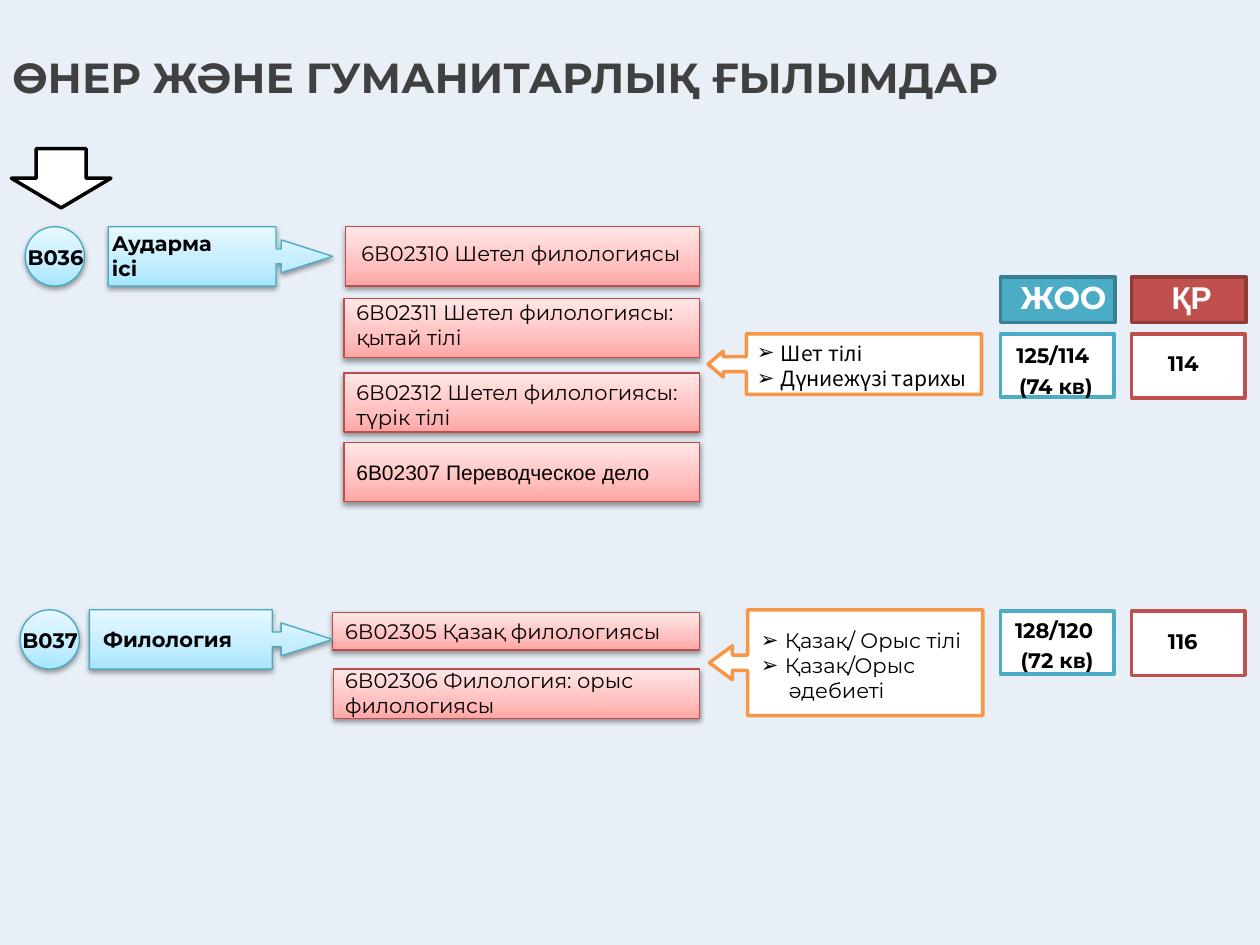
from lxml.etree import SubElement
from pptx import Presentation
from pptx.dml.color import RGBColor
from pptx.enum.shapes import MSO_SHAPE
from pptx.enum.text import MSO_ANCHOR, PP_ALIGN
from pptx.oxml import parse_xml
from pptx.oxml.ns import nsdecls, qn
from pptx.util import Inches, Pt

WHITE = RGBColor(0xFF, 0xFF, 0xFF)
BLACK = RGBColor(0, 0, 0)
GREY = RGBColor(0x40, 0x40, 0x40)
PALE = RGBColor(0xDC, 0xE6, 0xF2)
ORANGE = RGBColor(0xF7, 0x96, 0x46)
TEAL = RGBColor(0x4B, 0xAC, 0xC6)
DARK_TEAL = RGBColor(0x37, 0x7F, 0x92)
SKY_EDGE = RGBColor(0x46, 0xAA, 0xC5)
RED = RGBColor(0xC0, 0x50, 0x4D)
DARK_RED = RGBColor(0x8E, 0x3B, 0x39)
ROSE_EDGE = RGBColor(0xBF, 0x4C, 0x48)
SKY = [(0, RGBColor(0xA7, 0xE6, 0xFF)), (35, RGBColor(0xC1, 0xED, 0xFF)),
       (100, RGBColor(0xE7, 0xF8, 0xFF))]
ROSE = [(0, RGBColor(0xFF, 0xA6, 0xA5)), (35, RGBColor(0xFF, 0xC0, 0xBF)),
        (100, RGBColor(0xFF, 0xE7, 0xE7))]

WIDTH, HEIGHT = 10, 7.5
BADGE = 0.47           # height of badges, callouts and most programme bars
BAR_RIGHT = 5.55       # shared right edge of the programme bars
SCORE_WIDTH = 0.9
UNI_LEFT, STATE_LEFT = 7.94, 8.98

TITLE = "ӨНЕР ЖӘНЕ ГУМАНИТАРЛЫҚ ҒЫЛЫМДАР"

GROUPS = [
    {"code": "B036", "badge": (0.2, 1.8), "code_at": (0.12, 1.89),
     "arrow": (0.86, 1.8, 1.78, BADGE), "arrow_adj": (0.25, 0.278, 0.868, 0.748),
     "name": ["Аударма", "ісі"], "name_at": (0.79, 1.78, 1.61, 0.5),
     "subjects": ["Шет тілі", "Дүниежүзі тарихы"], "tail": None,
     "subject_font": "Noto Sans CJK KR", "subject_at": (5.91, 2.65, 2.17, 0.5),
     "callout": (5.62, 2.65, 2.17, 0.48), "callout_adj": (0.25, 0.213, 0.25, 0.86),
     "score_top": 2.65, "uni": ["125/114 ", "(74 кв)"], "uni_at": (7.93, 2.64),
     "state": "114", "state_top": 2.73},
    {"code": "B037", "badge": (0.16, 4.84), "code_at": (0.08, 4.93),
     "arrow": (0.71, 4.84, 1.93, BADGE), "arrow_adj": (0.25, 0.278, 0.868, 0.752),
     "name": ["Филология"], "name_at": (0.72, 4.92, 3.3, 0.3),
     "subjects": ["Қазақ/ Орыс тілі", "Қазақ/Орыс"], "tail": "әдебиеті",
     "subject_font": "Montserrat", "subject_at": (5.94, 4.93, 2.05, 0.71),
     "callout": (5.63, 4.84, 2.17, 0.84), "callout_adj": (0.144, 0.16, 0.218, 0.86),
     "score_top": 4.85, "uni": ["128/120 ", "(72 кв)"], "uni_at": (7.94, 4.82),
     "state": "116", "state_top": 4.94},
]

# bar left, top, height; text left, top, width; lines; font
PROGRAMMES = [
    (2.74, 1.8, BADGE, (2.77, 1.86, 3.78), ["6В02310 Шетел филологиясы"], "Montserrat"),
    (2.73, 2.37, BADGE, (2.73, 2.33, 3.15),
     ["6В02311 Шетел филологиясы:", "қытай тілі"], "Montserrat"),
    (2.73, 2.96, BADGE, (2.73, 2.96, 3.15),
     ["6В02312 Шетел филологиясы:", "түрік тілі"], "Montserrat"),
    (2.73, 3.51, BADGE, (2.73, 3.6, 2.99), ["6В02307 Переводческое дело"], "Arial"),
    (2.64, 4.86, 0.3, None, ["6В02305 Қазақ филологиясы"], "Montserrat"),
    (2.65, 5.31, 0.39, (2.64, 5.25, 3.15),
     ["6В02306 Филология: орыс", "филологиясы"], "Montserrat"),
]

# left, fill, edge, text, text left, text width, font, alignment
HEADERS = [
    (UNI_LEFT, TEAL, DARK_TEAL, "ЖОО", 7.99, 0.9, "Montserrat", PP_ALIGN.CENTER),
    (STATE_LEFT, RED, DARK_RED, "ҚР", 9.2, 0.77, "Arial", PP_ALIGN.LEFT),
]

deck = Presentation()
deck.slide_width, deck.slide_height = Inches(WIDTH), Inches(HEIGHT)
page = deck.slides.add_slide(deck.slide_layouts[6])


def add_shape(kind, at, fill, edge=None, weight=2.0, adjust=()):
    """Add a flat shape, or a glossy one with a shadow when fill is a list of stops."""
    shape = page.shapes.add_shape(kind, *map(Inches, at))
    shape.shadow.inherit = False
    for index, value in enumerate(adjust):
        shape.adjustments[index] = value
    if isinstance(fill, list):
        add_gloss(shape, fill)
    else:
        shape.fill.solid()
        shape.fill.fore_color.rgb = fill
    if edge is None:
        shape.line.fill.background()
    else:
        shape.line.color.rgb = edge
        shape.line.width = Pt(weight)
    return shape


def add_gloss(shape, stops):
    """Give the shape an upward gradient and a soft shadow below."""
    marks = "".join(f'<a:gs pos="{pos * 1000}"><a:srgbClr val="{color}"/></a:gs>'
                    for pos, color in stops)
    gradient = parse_xml(f'<a:gradFill {nsdecls("a")} rotWithShape="1"><a:gsLst>{marks}'
                         '</a:gsLst><a:lin ang="16200000" scaled="0"/></a:gradFill>')
    properties = shape.element.spPr
    properties.find(qn("a:prstGeom")).addnext(gradient)
    shadow = SubElement(properties.find(qn("a:effectLst")), qn("a:outerShdw"),
                        blurRad=str(Pt(3.1)), dist=str(Pt(1.6)), dir="5400000",
                        rotWithShape="0")
    color = SubElement(shadow, qn("a:srgbClr"), val=str(BLACK))
    SubElement(color, qn("a:alpha"), val="38000")


def write(box, lines, font="Montserrat", size=12, color=BLACK, bold=False,
          align=PP_ALIGN.LEFT, anchor=MSO_ANCHOR.TOP):
    frame = box.text_frame
    frame.word_wrap = True
    frame.vertical_anchor = anchor
    for index, line in enumerate(lines):
        para = frame.paragraphs[0] if index == 0 else frame.add_paragraph()
        para.alignment = align
        span = para.add_run()
        span.text = line
        span.font.name, span.font.size = font, Pt(size)
        span.font.bold, span.font.color.rgb = bold, color
    return frame.paragraphs


def add_label(at, lines, **style):
    return write(page.shapes.add_textbox(*map(Inches, at)), lines, **style)


def indent(para, left, bullet=None):
    properties = para._p.get_or_add_pPr()
    properties.set("marL", str(Inches(left)))
    if bullet:
        properties.set("indent", str(-Inches(left)))
        SubElement(properties, qn("a:buFont"), typeface="Arial")
        SubElement(properties, qn("a:buChar"), char=bullet)


def add_group(group):
    add_shape(MSO_SHAPE.RIGHT_ARROW_CALLOUT, group["arrow"], SKY, SKY_EDGE, 0.75,
              group["arrow_adj"])
    add_label(group["name_at"], group["name"], bold=True)
    add_shape(MSO_SHAPE.OVAL, (*group["badge"], BADGE, BADGE), SKY, SKY_EDGE, 0.75)
    add_label((*group["code_at"], 0.71, 0.3), [group["code"]], bold=True)

    add_shape(MSO_SHAPE.LEFT_ARROW_CALLOUT, group["callout"], WHITE, ORANGE,
              adjust=group["callout_adj"])
    tail = [group["tail"]] if group["tail"] else []
    paras = add_label(group["subject_at"], group["subjects"] + tail,
                      font=group["subject_font"])
    for index, para in enumerate(paras):
        if index < len(group["subjects"]):
            indent(para, 0.19, "➢")
        else:
            indent(para, 0.22)

    top = group["score_top"]
    add_shape(MSO_SHAPE.RECTANGLE, (UNI_LEFT, top, SCORE_WIDTH, 0.5), WHITE, TEAL)
    for para in add_label((*group["uni_at"], SCORE_WIDTH, 0.56), group["uni"],
                          bold=True, align=PP_ALIGN.CENTER):
        para.line_spacing, para.space_after = 1.15, Pt(1)
    add_shape(MSO_SHAPE.RECTANGLE, (STATE_LEFT, top, SCORE_WIDTH, 0.51), WHITE, RED)
    add_label((9.17, group["state_top"], 0.79, 0.3), [group["state"]], bold=True)


backdrop = add_shape(MSO_SHAPE.RECTANGLE, (0, 0, WIDTH, HEIGHT), PALE)
tint = backdrop.element.spPr.find(qn("a:solidFill")).find(qn("a:srgbClr"))
SubElement(tint, qn("a:alpha"), val="63000")
add_label((0, 0.02, WIDTH, 1.17), [TITLE], size=24, color=GREY, bold=True,
          anchor=MSO_ANCHOR.MIDDLE)
add_shape(MSO_SHAPE.DOWN_ARROW, (0.09, 1.18, 0.79, 0.47), WHITE, BLACK)

for left, top, height, text_at, lines, font in PROGRAMMES:
    bar = add_shape(MSO_SHAPE.RECTANGLE, (left, top, BAR_RIGHT - left, height),
                    ROSE, ROSE_EDGE, 0.75)
    if text_at:
        add_label((*text_at, 0.1 + 0.2 * len(lines)), lines, font=font)
    else:
        write(bar, lines, font=font)

for group in GROUPS:
    add_group(group)

for left, fill, edge, text, text_left, text_width, font, align in HEADERS:
    add_shape(MSO_SHAPE.RECTANGLE, (left, 2.2, 0.91, 0.36), fill, edge)
    add_label((text_left, 2.16, text_width, 0.4), [text], font=font, size=18,
              color=WHITE, bold=True, align=align)

deck.save("out.pptx")
